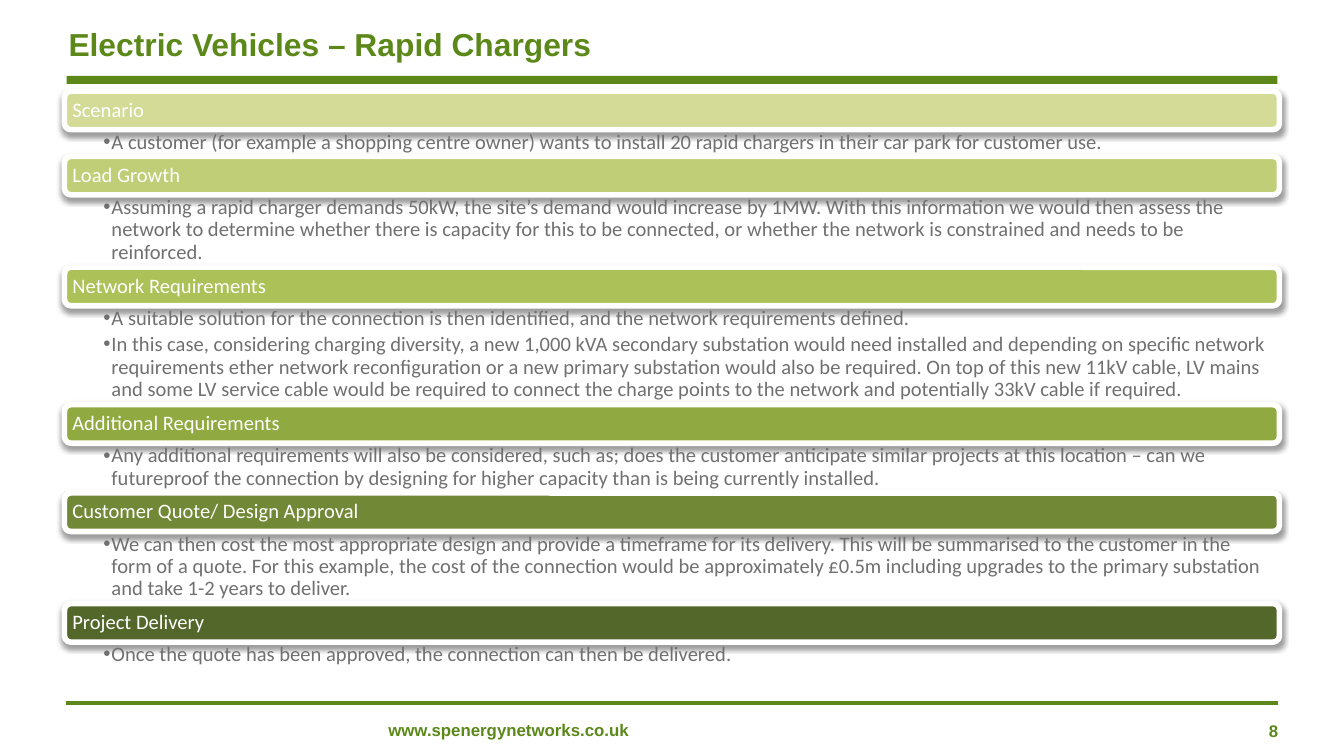
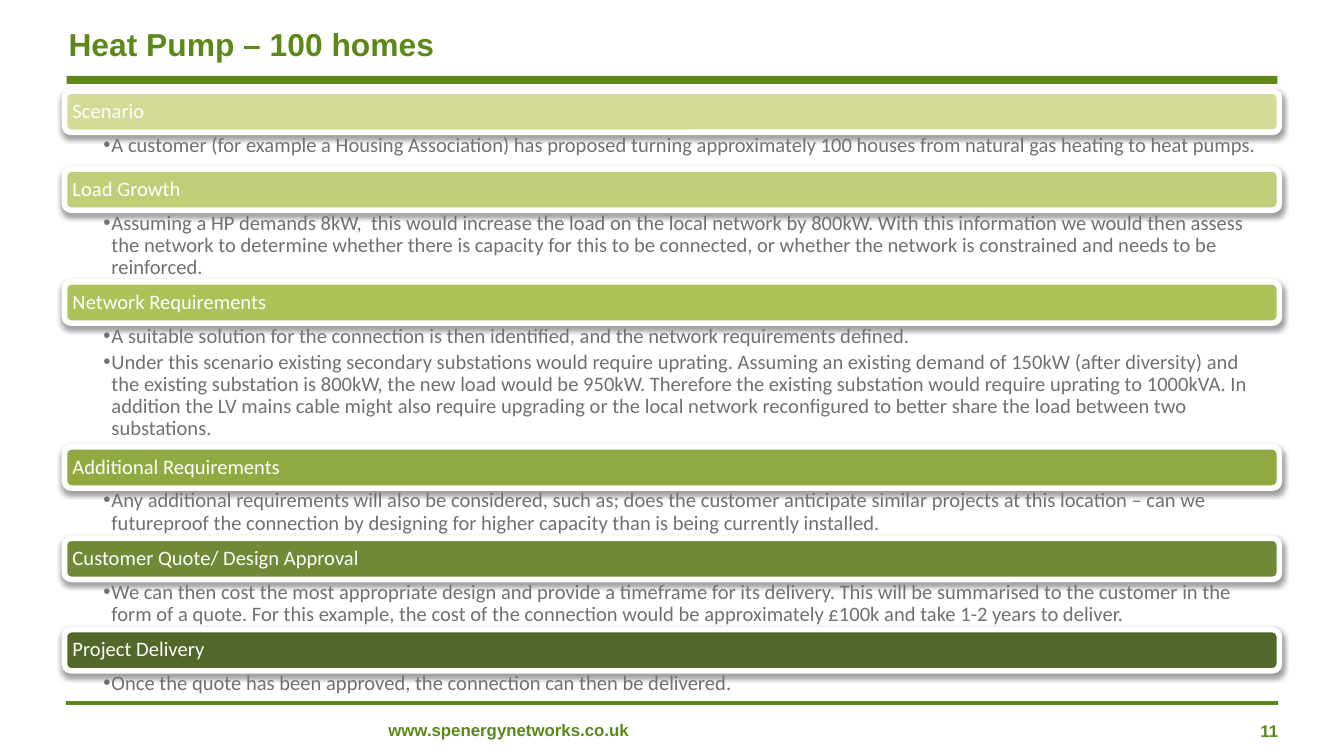
from lxml.etree import SubElement
from pptx import Presentation
from pptx.dml.color import RGBColor
from pptx.enum.shapes import MSO_CONNECTOR, MSO_SHAPE
from pptx.enum.text import MSO_ANCHOR, MSO_AUTO_SIZE, PP_ALIGN
from pptx.oxml.ns import qn
from pptx.util import Inches, Pt

GREEN, GREY, WHITE = "5C881A", "707070", "FFFFFF"
SHADES = ["D3DB97", "C0CE77", "ACC157", "90AA41", "718836", "53672A"]
HEADS = ["Scenario", "Load Growth", "Network Requirements",
         "Additional Requirements", "Customer Quote/ Design Approval",
         "Project Delivery"]

FOUND = ("A suitable solution for the connection is then identified, "
         "and the network requirements defined.")
EXTRA = ("Any additional requirements will also be considered, such as; does "
         "the customer anticipate similar projects at this location – can we "
         "futureproof the connection by designing for higher capacity than is "
         "being currently installed.")
ASSESS = ("With this information we would then assess the network to determine "
          "whether there is capacity for this to be connected, or whether the "
          "network is constrained and needs to be reinforced.")
QUOTE = ("We can then cost the most appropriate design and provide a timeframe "
         "for its delivery. This will be summarised to the customer in the form "
         "of a quote. For this example, the cost of the connection would be "
         "approximately ")
DONE = "Once the quote has been approved, the connection can then be delivered."

PAGES = [
    ("Electric Vehicles – Rapid Chargers", "8", 2.87, [
        (1.98, ["A customer (for example a shopping centre owner) wants to "
                "install 20 rapid chargers in their car park for customer use."]),
        (5.38, ["Assuming a rapid charger demands 50kW, the site’s demand would "
                "increase by 1MW. " + ASSESS]),
        (7.36, [FOUND,
                "In this case, considering charging diversity, a new 1,000 kVA "
                "secondary substation would need installed and depending on "
                "specific network requirements ether network reconfiguration or "
                "a new primary substation would also be required. On top of this "
                "new 11kV cable, LV mains and some LV service cable would be "
                "required to connect the charge points to the network and "
                "potentially 33kV cable if required."]),
        (3.7, [EXTRA]),
        (5.36, [QUOTE + "£0.5m including upgrades to the primary substation "
                "and take 1-2 years to deliver."]),
        (4, [DONE])]),
    ("Heat Pump – 100 homes", "11", 3.07, [
        (2.73, ["A customer (for example a Housing Association) has proposed "
                "turning approximately 100 houses from natural gas heating to "
                "heat pumps."]),
        (5.33, ["Assuming a HP demands 8kW,  this would increase the load on "
                "the local network by 800kW. " + ASSESS]),
        (9.2, [FOUND,
               "Under this scenario existing secondary substations would "
               "require uprating. Assuming an existing demand of 150kW (after "
               "diversity) and the existing substation is 800kW, the new load "
               "would be 950kW. Therefore the existing substation would require "
               "uprating to 1000kVA. In addition the LV mains cable might also "
               "require upgrading or the local network reconfigured to better "
               "share the load between two substations."]),
        (3.73, [EXTRA]),
        (3.73, [QUOTE + "£100k and take 1-2 years to deliver."]),
        (4.1, [DONE])]),
]


def tint(code):
    return RGBColor.from_string(code)


class Deck:
    cols = 100

    def __init__(self):
        self.prs = Presentation()
        wide = Inches(10)
        self.prs.slide_width = wide
        self.prs.slide_height = wide * 9 // 16
        self.unit = wide // self.cols

    def grid(self, *cells):
        return [round(cell * self.unit) for cell in cells]

    def inset(self, frame, left=0, top=0, right=0, base=0):
        frame.word_wrap = True
        frame.auto_size = MSO_AUTO_SIZE.NONE
        (frame.margin_left, frame.margin_top, frame.margin_right,
         frame.margin_bottom) = self.grid(left, top, right, base)

    def style(self, para, size, color, face="Arial", bold=False):
        for run in para.runs:
            font = run.font
            font.size, font.name, font.bold = Pt(size), face, bold
            font.color.rgb = tint(color)

    def page(self, title, number):
        self.slide = self.prs.slides.add_slide(self.prs.slide_layouts[5])
        self.shapes = self.slide.shapes
        self.title(title)
        self.band()
        self.rule()
        self.note(number, (84.2, 53.65, 10.9, 1.6), PP_ALIGN.RIGHT)
        self.note("www.spenergynetworks.co.uk", (28.9, 53.55, 24.7, 1.5),
                  PP_ALIGN.LEFT)

    def title(self, text):
        hold = self.shapes.title
        hold.left, hold.top, hold.width, hold.height = self.grid(5.1, .95, 93.9, 4.7)
        frame = hold.text_frame
        frame.text = text
        self.inset(frame, 0, .5, 1, .5)
        frame.vertical_anchor = MSO_ANCHOR.MIDDLE
        para = frame.paragraphs[0]
        para.alignment = PP_ALIGN.LEFT
        para.line_spacing = Pt(20)
        self.style(para, 17, GREEN, bold=True)

    def band(self):
        bar = self.shapes.add_shape(MSO_SHAPE.RECTANGLE,
                                    *self.grid(4.95, 5.65, 90.1, .6))
        bar.shadow.inherit = False
        bar.fill.solid()
        bar.fill.fore_color.rgb = tint(GREEN)
        bar.line.fill.background()

    def rule(self):
        line = self.shapes.add_connector(MSO_CONNECTOR.STRAIGHT,
                                         *self.grid(4.9, 52.33, 95.1, 52.33))
        line.line.color.rgb = tint(GREEN)
        line.line.width = Pt(2)
        SubElement(line._element.spPr, qn("a:effectLst"))

    def note(self, text, box, align):
        frame = self.shapes.add_textbox(*self.grid(*box)).text_frame
        frame.text = text
        self.inset(frame)
        para = frame.paragraphs[0]
        para.alignment = align
        self.style(para, 9, GREEN, bold=True)

    def head(self, text, color, top, tall):
        bar = self.shapes.add_shape(MSO_SHAPE.ROUNDED_RECTANGLE,
                                    *self.grid(4.8, top, 90.4, tall))
        bar.fill.solid()
        bar.fill.fore_color.rgb = tint(color)
        bar.line.color.rgb = tint(WHITE)
        bar.line.width = Pt(3)
        self.shade(bar)
        frame = bar.text_frame
        frame.text = text
        self.inset(frame, .45, .5, .5, .5)
        frame.vertical_anchor = MSO_ANCHOR.MIDDLE
        para = frame.paragraphs[0]
        para.alignment = PP_ALIGN.LEFT
        para.line_spacing = .9
        self.style(para, 11, WHITE, "Calibri")

    def shade(self, shape):
        shape.shadow.inherit = False
        fx = shape._element.spPr.find(qn("a:effectLst"))
        cast = SubElement(fx, qn("a:outerShdw"), blurRad=str(Pt(3.1)),
                          dist=str(Pt(1.6)), dir="5400000", rotWithShape="0")
        ink = SubElement(cast, qn("a:srgbClr"), val="000000")
        SubElement(ink, qn("a:alpha"), val="38000")

    def body(self, lines, top, tall):
        box = self.shapes.add_textbox(*self.grid(4.8, top, 90.4, tall))
        frame = box.text_frame
        frame.text = "\n".join(lines)
        self.inset(frame, 2.9, .15, .9, .15)
        dent = self.grid(.6)[0]
        for para in frame.paragraphs:
            props = para._p.get_or_add_pPr()
            props.set("marL", str(dent))
            props.set("indent", str(-dent))
            SubElement(props, qn("a:buFont"), typeface="Arial")
            SubElement(props, qn("a:buChar"), char="•")
            para.level = 1
            para.line_spacing = .9
            para.space_after = Pt(2.2)
            self.style(para, 11, GREY, "Calibri")

    def stack(self, tall, parts):
        top = 6.78
        for head, color, (room, lines) in zip(HEADS, SHADES, parts):
            self.head(head, color, top, tall)
            self.body(lines, top + tall, room)
            top += tall + room


def main():
    deck = Deck()
    for title, number, tall, parts in PAGES:
        deck.page(title, number)
        deck.stack(tall, parts)
    deck.prs.save("out.pptx")


if __name__ == "__main__":
    main()
